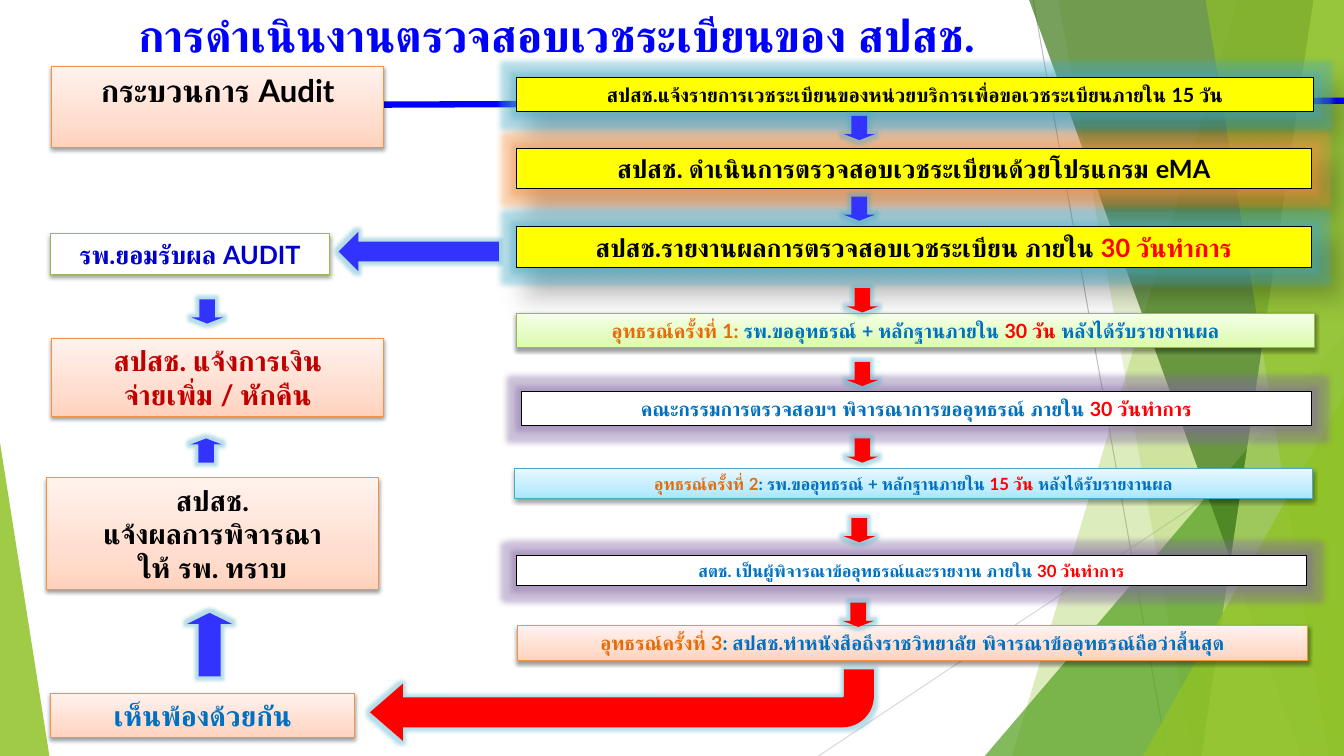
from copy import deepcopy
from lxml import etree
from pptx import Presentation
from pptx.dml.color import RGBColor
from pptx.enum.shapes import MSO_CONNECTOR, MSO_SHAPE
from pptx.enum.text import MSO_ANCHOR, PP_ALIGN
from pptx.oxml.ns import qn
from pptx.util import Inches, Pt

RECT, TRI = MSO_SHAPE.RECTANGLE, MSO_SHAPE.ISOSCELES_TRIANGLE
DOWN, UP = MSO_SHAPE.DOWN_ARROW, MSO_SHAPE.UP_ARROW
LEFT, BENT = MSO_SHAPE.LEFT_ARROW, MSO_SHAPE.BENT_ARROW
LINE = MSO_CONNECTOR.STRAIGHT
TOP, MID = MSO_ANCHOR.TOP, MSO_ANCHOR.MIDDLE
CENTER = PP_ALIGN.CENTER

# Grid of tenth-inch cells
CELL = Inches(0.1)
COLS, ROWS = 133.33, 75
FONT = "Lato"
BLACK, WHITE, YELLOW = "000000", "FFFFFF", "FFFF00"
RED, BLUE, ORANGE = "FF0000", "0070C0", "E46C0A"
ARROW = "3333FF"
PEACH = ["FFD2BD", "FFDED0", "FFF2ED"]
LIME = ["DAFDA7", "E4FCC2", "F5FFE7"]
SKY = ["A7E6FF", "C1EDFF", "E7F8FF"]
AQUA, CORAL, LILAC = "46AAC5", "F69240", "8064A2"
# Shadow: opacity, blur, distance, angle
SOFT, DEEP = (38, 3.1, 1.6, 90), (30, 15, 18, 45)

rgb = RGBColor.from_string


def paint(shape, fill, line=None, alpha=100, glow=None, shade=None):
    """Fill, outline and effects; a list of colours makes a gradient."""
    if isinstance(fill, list):
        shape.fill.gradient()
        shape.fill.gradient_angle = 90
        stops = shape._element.spPr.find(".//" + qn("a:gsLst"))
        stops.append(deepcopy(stops[0]))
        for stop, tint, pos in zip(shape.fill.gradient_stops, fill, (0, 0.35, 1)):
            stop.color.rgb, stop.position = rgb(tint), pos
    else:
        shape.fill.solid()
        shape.fill.fore_color.rgb = rgb(fill)
        if alpha < 100:
            tint = shape._element.spPr.find(".//" + qn("a:srgbClr"))
            etree.SubElement(tint, qn("a:alpha"), val=str(alpha * 1000))
    if line:
        shape.line.color.rgb = rgb(line)
        shape.line.width = Pt(0.75)
    else:
        shape.line.fill.background()
    shape.shadow.inherit = False
    fx = shape._element.spPr.find(qn("a:effectLst"))
    parts = []
    if glow:
        tint, size = glow
        parts.append(("a:glow", {"rad": Pt(size)}, tint, 40))
    if shade:
        dark, blur, dist, turn = shade
        parts.append(("a:outerShdw", {"blurRad": Pt(blur), "dist": Pt(dist),
                                      "dir": turn * 60000, "rotWithShape": 0}, BLACK, dark))
    for tag, sizes, tint, dark in parts:
        node = etree.SubElement(fx, qn(tag), {k: str(int(v)) for k, v in sizes.items()})
        hue = etree.SubElement(node, qn("a:srgbClr"), val=tint)
        etree.SubElement(hue, qn("a:alpha"), val=str(dark * 1000))


def write(shape, size, lines, anchor=MID):
    """Centred bold text; each line is a list of (text, colour) runs."""
    frame = shape.text_frame
    frame.word_wrap = True
    frame.vertical_anchor = anchor
    for i, runs in enumerate(lines):
        para = frame.add_paragraph() if i else frame.paragraphs[0]
        para.alignment = CENTER
        para.font.size, para.font.bold, para.font.name = Pt(size), True, FONT
        for text, tint in runs:
            run = para.add_run()
            run.text = text
            run.font.color.rgb = rgb(tint)


prs = Presentation()
prs.slide_width, prs.slide_height = int(COLS * CELL), ROWS * CELL
slide = prs.slides.add_slide(prs.slide_layouts[6])
shapes = slide.shapes

# Thin rays, and the rule behind the top boxes
rays = [(102.5, 0, 115.8, ROWS, "BFBFBF", 0.75),
        (COLS, 40.3, 81.2, ROWS, "D9D9D9", 0.75),
        (7.9, 10.5, COLS, 10, "0000FF", 4.5)]
for *ends, tint, width in rays[:2]:
    ray = shapes.add_connector(LINE, *[int(v * CELL) for v in ends])
    ray.line.color.rgb, ray.line.width = rgb(tint), Pt(width)
    etree.SubElement(ray._element.spPr, qn("a:effectLst"))

# Green facets: top and foot of the slanted edge; triangles: box and apex
facets = [((122.8, 100.4), "90C226", 30),
          ((105, 118.3), "90C226", 20),
          ((97.7, 33.3, 35.63, 41.7, 1), "54A021", 72),
          ((102.1, 129.1), "3F7819", 70),
          ((130.3, 119.2), "C0E474", 70),
          ((119.6, 131.8), "90C226", 65),
          ((113.4, 39.3, 19.93, 35.7, 1), "90C226", 80),
          ((0, 43.9, 4.9, 31.1, 0), "90C226", 85)]
for form, tint, alpha in facets:
    if len(form) == 2:
        top, foot = [int(v * CELL) for v in form]
        pen = shapes.build_freeform(top, 0)
        pen.add_line_segments([(prs.slide_width, 0), (prs.slide_width, prs.slide_height),
                               (foot, prs.slide_height)])
        facet = pen.convert_to_shape()
    else:
        *box, apex = form
        facet = shapes.add_shape(TRI, *[int(v * CELL) for v in box])
        facet.adjustments[0] = apex
    paint(facet, tint, alpha=alpha)

for *ends, tint, width in rays[2:]:
    rule = shapes.add_connector(LINE, *[int(v * CELL) for v in ends])
    rule.line.color.rgb, rule.line.width = rgb(tint), Pt(width)
    etree.SubElement(rule._element.spPr, qn("a:effectLst"))

# Title
title = shapes.add_textbox(*[int(v * CELL) for v in (3.6, 0.1, 103.2, 6.7)])
write(title, 32, [[("การดำเนินงานตรวจสอบเวชระเบียนของ สปสช.", "0000FF")]])

# Boxes: place, fill, line, glow, shadow, size, lines
boxes = [
    ((5.1, 6.6, 33, 8), PEACH, CORAL, None, SOFT, 22.2, [[("กระบวนการ Audit", BLACK)]]),
    ((51.2, 7.7, 79.1, 3.4), YELLOW, BLACK, (AQUA, 8), DEEP, 14,
     [[("สปสช.แจ้งรายการเวชระเบียนของหน่วยบริการเพื่อขอเวชระเบียนภายใน 15 วัน", BLACK)]]),
    ((51.2, 14.7, 78.9, 4), YELLOW, BLACK, (CORAL, 8), DEEP, 18,
     [[("สปสช. ดำเนินการตรวจสอบเวชระเบียนด้วยโปรแกรม eMA", BLACK)]]),
    ((51.2, 22.5, 78.9, 4), YELLOW, BLACK, (AQUA, 8), DEEP, 18,
     [[("สปสช.รายงานผลการตรวจสอบเวชระเบียน ภายใน ", BLACK), ("30 วันทำการ", RED)]]),
    ((5, 23.2, 27.7, 4), WHITE, "98B955", None, SOFT, 18, [[("รพ.ยอมรับผล AUDIT", "0000CC")]]),
    ((51.2, 31.1, 79.2, 3.4), LIME, "98B955", None, SOFT, 14,
     [[("อุทธรณ์ครั้งที่ 1: ", ORANGE), ("รพ.ขออุทธรณ์ + หลักฐานภายใน ", BLUE),
       ("30 วัน ", RED), ("หลังได้รับรายงานผล", BLUE)]]),
    ((51.7, 38.8, 78.4, 3.4), WHITE, BLACK, (LILAC, 8), None, 14,
     [[("คณะกรรมการตรวจสอบฯ พิจารณาการขออุทธรณ์ ภายใน ", BLUE), ("30 วันทำการ", RED)]]),
    ((5.1, 33.6, 33, 7.7), PEACH, CORAL, None, SOFT, 20,
     [[("สปสช. แจ้งการเงิน", "C00000")], [("จ่ายเพิ่ม / หักคืน", "C00000")]]),
    ((4.6, 47.4, 33, 11.1), PEACH, CORAL, None, SOFT, 20,
     [[("สปสช.", BLACK)], [("แจ้งผลการพิจารณา", BLACK)], [("ให้ รพ. ทราบ", BLACK)]]),
    ((5, 68.8, 30.2, 4.4), PEACH, CORAL, None, SOFT, 20, [[("เห็นพ้องด้วยกัน", BLUE)]]),
    ((51.2, 55.1, 78.4, 3), WHITE, BLACK, (LILAC, 8), None, 12,
     [[("สตช. เป็นผู้พิจารณาข้ออุทธรณ์และรายงาน ภายใน ", BLUE), ("30 วันทำการ", RED)]]),
    ((51, 46.5, 79.2, 3), SKY, AQUA, None, SOFT, 12,
     [[("อุทธรณ์ครั้งที่ 2", ORANGE), (": รพ.ขออุทธรณ์ + หลักฐานภายใน ", BLUE),
       ("15 วัน ", RED), ("หลังได้รับรายงานผล", BLUE)]]),
    ((51.3, 62.1, 78.4, 3.4), PEACH, CORAL, None, SOFT, 14,
     [[("อุทธรณ์ครั้งที่ 3", ORANGE),
       (": สปสช.ทำหนังสือถึงราชวิทยาลัย พิจารณาข้ออุทธรณ์ถือว่าสิ้นสุด", BLUE)]]),
]
for place, fill, line, glow, shade, size, lines in boxes:
    box = shapes.add_shape(RECT, *[int(v * CELL) for v in place])
    paint(box, fill, line, glow=glow, shade=shade)
    write(box, size, lines, TOP if place[3] == 8 else MID)

# Arrows: small ones share one size
small = (3.1, 2.4)
arrows = [(DOWN, x, y, *small, ARROW) for x, y in ((83.7, 11.5), (83.7, 19.5), (19, 29.7))]
arrows += [(DOWN, x, y, *small, RED) for x, y in
           ((84, 28.6), (84, 35.9), (84, 43.5), (83.7, 51.4), (83.6, 59.8))]
arrows += [(UP, 18.9, 43.5, *small, ARROW), (UP, 18.6, 60.8, 4.4, 6.3, ARROW),
           (LEFT, 33.6, 23, 15.9, 3.9, ARROW), (BENT, 36.7, 66.4, 50, 7.1, RED)]
for kind, *place, tint in arrows:
    arrow = shapes.add_shape(kind, *[int(v * CELL) for v in place])
    paint(arrow, tint, glow=(AQUA, 5))
    if kind == BENT:
        arrow.rotation = 180
        for i, share in enumerate((0.42, 0.4, 0.46, 0.44)):
            arrow.adjustments[i] = share
    elif kind != LEFT:
        arrow.adjustments[0], arrow.adjustments[1] = 0.5, 0.25

prs.save("out.pptx")
